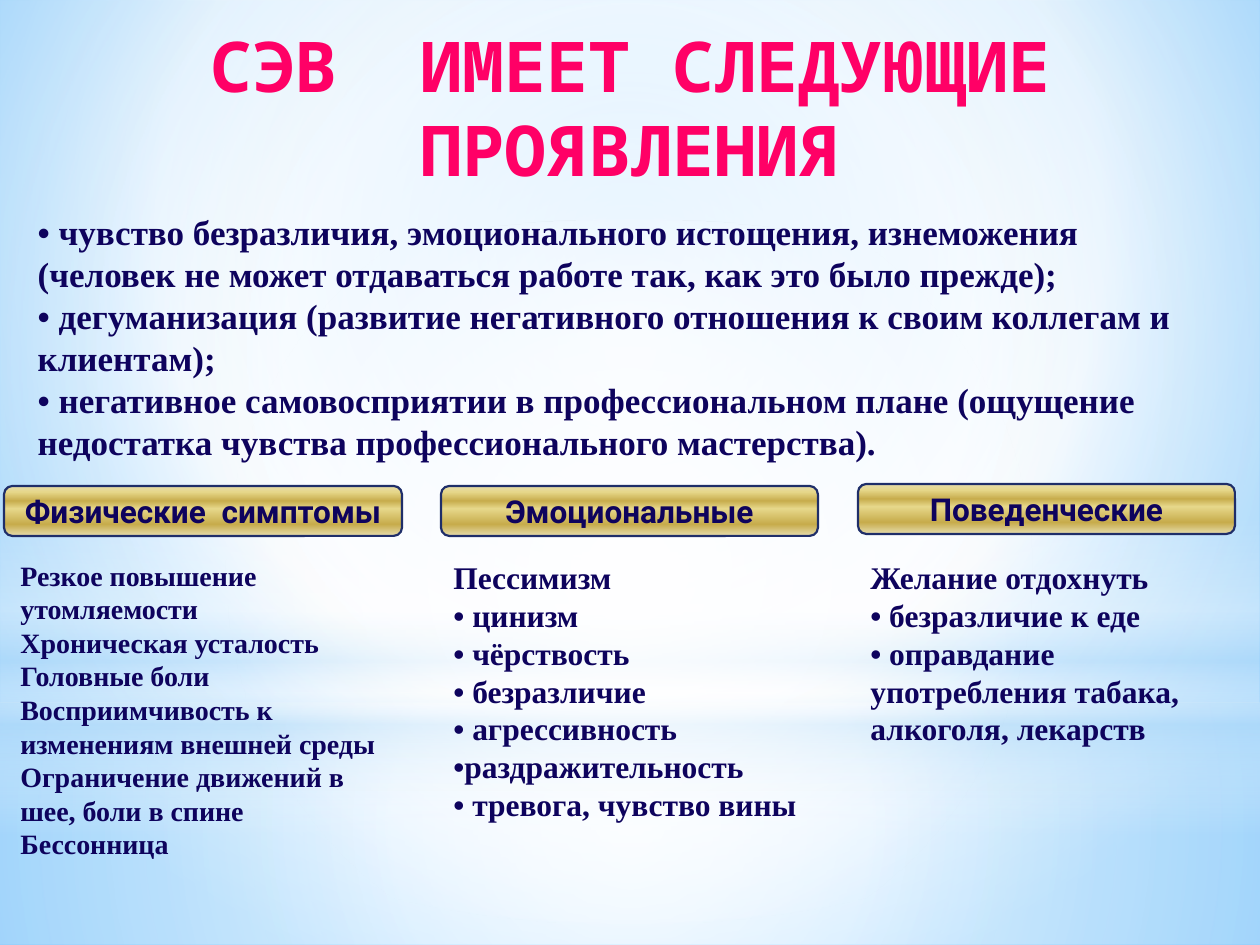
from lxml import etree
from pptx import Presentation
from pptx.dml.color import RGBColor
from pptx.enum.shapes import MSO_SHAPE
from pptx.enum.text import MSO_ANCHOR, PP_ALIGN
from pptx.oxml.ns import qn
from pptx.util import Pt

PX = 914400 / 126
RECT, OVAL, ROUND = MSO_SHAPE.RECTANGLE, MSO_SHAPE.OVAL, MSO_SHAPE.ROUNDED_RECTANGLE
LEFT, CENTER = PP_ALIGN.LEFT, PP_ALIGN.CENTER
TOP, MIDDLE = MSO_ANCHOR.TOP, MSO_ANCHOR.MIDDLE
NAVY, PINK = "0E035D", "FF0066"
SERIF, SANS, MONO = "Times New Roman", "Roboto", "Noto Sans Mono"
MID = (50, 50, 50, 50)
GOLD = [(0, "E6DCAC"), (12, "E6D78A"), (30, "C7AC4C"),
        (45, "E6D78A"), (77, "C7AC4C"), (100, "E6DCAC")]
GLOWS = [
    (RECT, (0, 703, 1260, 242), [(0, "FFFFFF", 91), (37, "FFFFFF", 76), (100, "B4DCFA", 79)], MID),
    (RECT, (0, 0, 1260, 703), [(0, "FFFFFF", 89), (48, "FFFFFF", 62), (100, "B4DCFA", 79)], MID),
    (RECT, (0, 519, 1260, 315), [(0, "FFFFFF", 0), (29, "FFFFFF", 30), (45, "B4DCFA", 40),
                                 (55, "FFFFFF", 26), (65, "B4DCFA", 60), (100, "FFFFFF", 0)], None),
    (OVAL, (0, 220, 1260, 703), [(0, "FFFFFF"), (56, "FFFFFF", 0)], MID),
]
SIGNS = [
    "• чувство безразличия, эмоционального истощения, изнеможения "
    "(человек не может отдаваться работе так, как это было прежде);",
    "• дегуманизация (развитие негативного отношения к своим коллегам и клиентам);",
    "• негативное самовосприятии в профессиональном плане "
    "(ощущение недостатка чувства профессионального мастерства).",
]
COLUMNS = [
    ((4, 486, 398, 50), "Физические  симптомы", (8, 552, 394, 318), 16,
     ["Резкое повышение утомляемости", "Хроническая усталость", "Головные боли",
      "Восприимчивость к изменениям внешней среды",
      "Ограничение движений в шее, боли в спине", "Бессонница"]),
    ((441, 486, 377, 50), "Эмоциональные", (441, 552, 376, 280), 18,
     ["Пессимизм", "• цинизм", "• чёрствость", "• безразличие", "• агрессивность",
      "•раздражительность", "• тревога, чувство вины"]),
    ((858, 484, 377, 50), "Поведенческие", (858, 552, 377, 305), 18,
     ["Желание отдохнуть", "• безразличие к еде", "• оправдание употребления табака,",
      "алкоголя, лекарств"]),
]


def color(code):
    """Turn a hex string into a colour."""
    return RGBColor.from_string(code)


def emu(box):
    """Scale a box in px to EMU."""
    return [round(side * PX) for side in box]


def blend(fill, root, stops, focus=None):
    """Give a fill its stops, running down or out from a focus."""
    fill.gradient()
    grad = next(root.iter(qn("a:gradFill")))
    for part in list(grad):
        grad.remove(part)
    row = etree.SubElement(grad, qn("a:gsLst"))
    for pos, code, *alpha in stops:
        stop = etree.SubElement(row, qn("a:gs"), pos=str(pos * 1000))
        tint = etree.SubElement(stop, qn("a:srgbClr"), val=code)
        for part in alpha:
            etree.SubElement(tint, qn("a:alpha"), val=str(part * 1000))
    if focus:
        way = etree.SubElement(grad, qn("a:path"), {"path": "circle"})
        sides = {key: str(side * 1000) for key, side in zip("ltrb", focus)}
        etree.SubElement(way, qn("a:fillToRect"), sides)
    else:
        etree.SubElement(grad, qn("a:lin"), ang="5400000", scaled="0")


def write(shape, lines, size, font=SERIF, ink=NAVY, align=LEFT, anchor=TOP):
    """Fill a shape with bold paragraphs."""
    frame = shape.text_frame
    frame.word_wrap = True
    frame.vertical_anchor = anchor
    for i, line in enumerate(lines):
        para = frame.add_paragraph() if i else frame.paragraphs[0]
        para.alignment = align
        para.space_before = Pt(0)
        run = para.add_run()
        run.text = line
        run.font.size, run.font.bold, run.font.name = Pt(size), True, font
        run.font.color.rgb = color(ink)


def place(slide, shape, box):
    """Move a placeholder to a box, in front of the backdrop."""
    shape.left, shape.top, shape.width, shape.height = emu(box)
    slide.shapes.element.append(shape.element)


def panel(slide, kind, box, stops, focus=None):
    """Add a shape with a gradient fill and no line."""
    shape = slide.shapes.add_shape(kind, *emu(box))
    shape.shadow.inherit = False
    blend(shape.fill, shape.element, stops, focus)
    shape.line.fill.background()
    return shape


def backdrop(slide):
    """Paint the background and its glows."""
    blend(slide.background.fill, slide.element,
          [(0, "9ED5FF"), (60, "FFFFFF"), (100, "5BB9FF")], (20, 10, 20, 60))
    for glow in GLOWS:
        panel(slide, *glow)


def header(slide, box):
    """Set the title."""
    place(slide, slide.shapes.title, box)
    write(slide.shapes.title, ["СЭВ  ИМЕЕТ СЛЕДУЮЩИЕ ПРОЯВЛЕНИЯ"], 40, MONO, PINK, CENTER)


def summary(slide, box):
    """Set the list of main signs."""
    body = slide.placeholders[1]
    place(slide, body, box)
    write(body, SIGNS, 20)
    for para in body.text_frame.paragraphs:
        props = para._p.get_or_add_pPr()
        props.set("marL", "0")
        props.set("indent", "0")
        etree.SubElement(props, qn("a:buNone"))


def column(slide, top, name, box, size, lines):
    """Add a gold label with its symptoms below."""
    label = panel(slide, ROUND, top, GOLD)
    label.line.color.rgb = color("1F2E69")
    label.line.width = Pt(1.25)
    write(label, [name], 18, SANS, align=CENTER, anchor=MIDDLE)
    write(slide.shapes.add_textbox(*emu(box)), lines, size)


def main():
    """Build the deck."""
    deck = Presentation()
    deck.slide_width, deck.slide_height = emu((1260, 945))
    slide = deck.slides.add_slide(deck.slide_layouts[1])
    backdrop(slide)
    header(slide, (25, 16, 1211, 158))
    summary(slide, (25, 204, 1211, 310))
    for part in COLUMNS:
        column(slide, *part)
    deck.save("out.pptx")


if __name__ == "__main__":
    main()
